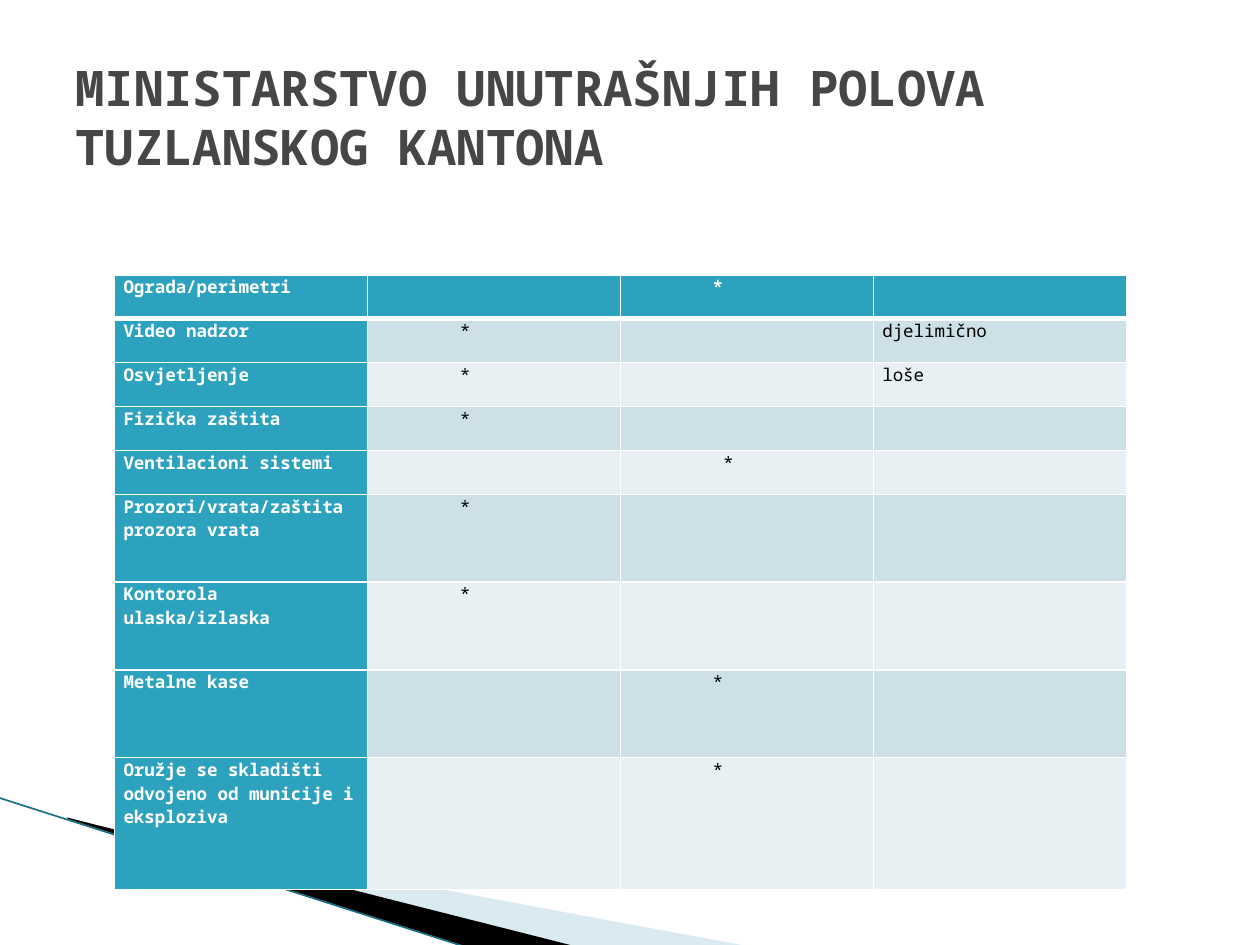
from pptx import Presentation
from pptx.util import Cm, Pt
from pptx.dml.color import RGBColor
from pptx.enum.shapes import MSO_CONNECTOR
from pptx.enum.text import MSO_ANCHOR, PP_ALIGN
from pptx.oxml.ns import qn
from lxml.etree import SubElement

WHITE = RGBColor(0xFF, 0xFF, 0xFF)
BLACK = RGBColor(0, 0, 0)
GREY = RGBColor(0x46, 0x46, 0x46)
TEAL = RGBColor(0x2D, 0xA2, 0xBF)
DARK_TEAL = RGBColor(0x1B, 0x6E, 0x83)
PALE = RGBColor(0xA0, 0xCB, 0xDC)
BANDS = [RGBColor(0xE8, 0xF0, 0xF4), RGBColor(0xCD, 0xE0, 0xE8)]
FONT = "Noto Sans Mono"


def set_font(font, **values):
    for name, value in values.items():
        if name == "color":
            font.color.rgb = value
        else:
            setattr(font, name, value)


def add_border(cell, side, width):
    ln = SubElement(cell._tc.get_or_add_tcPr(), qn("a:ln" + side), w=str(Pt(width)))
    fill = SubElement(ln, qn("a:solidFill"))
    SubElement(fill, qn("a:srgbClr"), val=str(WHITE))


prs = Presentation()
prs.slide_width, prs.slide_height = Cm(25.4), Cm(19.05)
s = prs.slides.add_slide(prs.slide_layouts[6])

wedges = [
    (PALE, 40, [(1.4, 16.54), (15.11, 19.08), (11.58, 19.08), (1.4, 16.51)]),
    (BLACK, 100, [(1.35, 16.48), (11.61, 19.08), (9.45, 19.1), (1.37, 16.51)]),
]
for color, alpha, points in wedges:
    points = [(Cm(x), Cm(y)) for x, y in points]
    fb = s.shapes.build_freeform(*points[0], scale=1.0)
    fb.add_line_segments(points[1:], close=True)
    sp = fb.convert_to_shape()
    sp.shadow.inherit = False
    sp.fill.solid()
    sp.fill.fore_color.rgb = color
    sp.line.fill.background()
    if alpha < 100:
        clr = sp._element.spPr.find(qn("a:solidFill"))[0]
        SubElement(clr, qn("a:alpha"), val=str(alpha * 1000))

line = s.shapes.add_connector(MSO_CONNECTOR.STRAIGHT, Cm(-0.03), Cm(16.08), Cm(9.42), Cm(19.1))
line.line.color.rgb = DARK_TEAL
line.line.width = Pt(0.95)
SubElement(line._element.spPr, qn("a:effectLst"))

rows = [
    ("Ograda/perimetri", 2, 8, "", 1),
    ("Video nadzor", 1, 8, "djelimično", 1),
    ("Osvjetljenje", 1, 8, "loše", 1),
    ("Fizička zaštita", 1, 8, "", 1),
    ("Ventilacioni sistemi", 2, 9, "", 1),
    ("Prozori/vrata/zaštita prozora vrata", 1, 8, "", 2),
    ("Kontorola ulaska/izlaska", 1, 8, "", 2),
    ("Metalne kase", 2, 8, "", 2),
    ("Oružje se skladišti odvojeno od municije i eksploziva", 2, 8, "", 3),
]
unit = 0.885
height = unit * sum(row[-1] for row in rows)
table = s.shapes.add_table(len(rows), 4, Cm(2.31), Cm(5.54), Cm(20.4), Cm(height)).table
for col in table.columns:
    col.width = Cm(5.1)

for i, (label, mark_col, indent, note, units) in enumerate(rows):
    table.rows[i].height = Cm(unit * units)
    texts = [label, "", "", note]
    texts[mark_col] = "*"
    for j, text in enumerate(texts):
        cell = table.cell(i, j)
        head = i == 0 or j == 0
        cell.margin_left = cell.margin_right = Cm(0.18)
        cell.margin_top = cell.margin_bottom = Cm(0)
        if j == mark_col:
            cell.margin_left = Cm(0.18 + indent * 0.21)
        for side in "LRTB":
            thick = (i, side) in [(0, "B"), (1, "T")]
            add_border(cell, side, 3 if thick else 1)
        cell.fill.solid()
        cell.fill.fore_color.rgb = TEAL if head else BANDS[i % 2]
        p = cell.text_frame.paragraphs[0]
        left = text == "djelimično" or (j == 0 and units == 3)
        p.alignment = PP_ALIGN.LEFT if left else PP_ALIGN.JUSTIFY
        look = dict(size=Pt(10), name=FONT, bold=head, color=WHITE if head else BLACK)
        set_font(p.font, **look)
        if text:
            r = p.add_run()
            r.text = text
            set_font(r.font, **look)

title = s.shapes.add_textbox(Cm(1.27), Cm(0.76), Cm(22.86), Cm(3.18))
tf = title.text_frame
tf.word_wrap = True
tf.vertical_anchor = MSO_ANCHOR.MIDDLE
r = tf.paragraphs[0].add_run()
r.text = "MINISTARSTVO UNUTRAŠNJIH POLOVA TUZLANSKOG KANTONA"
set_font(r.font, size=Pt(28), name=FONT, bold=True, color=GREY)

prs.save("out.pptx")
